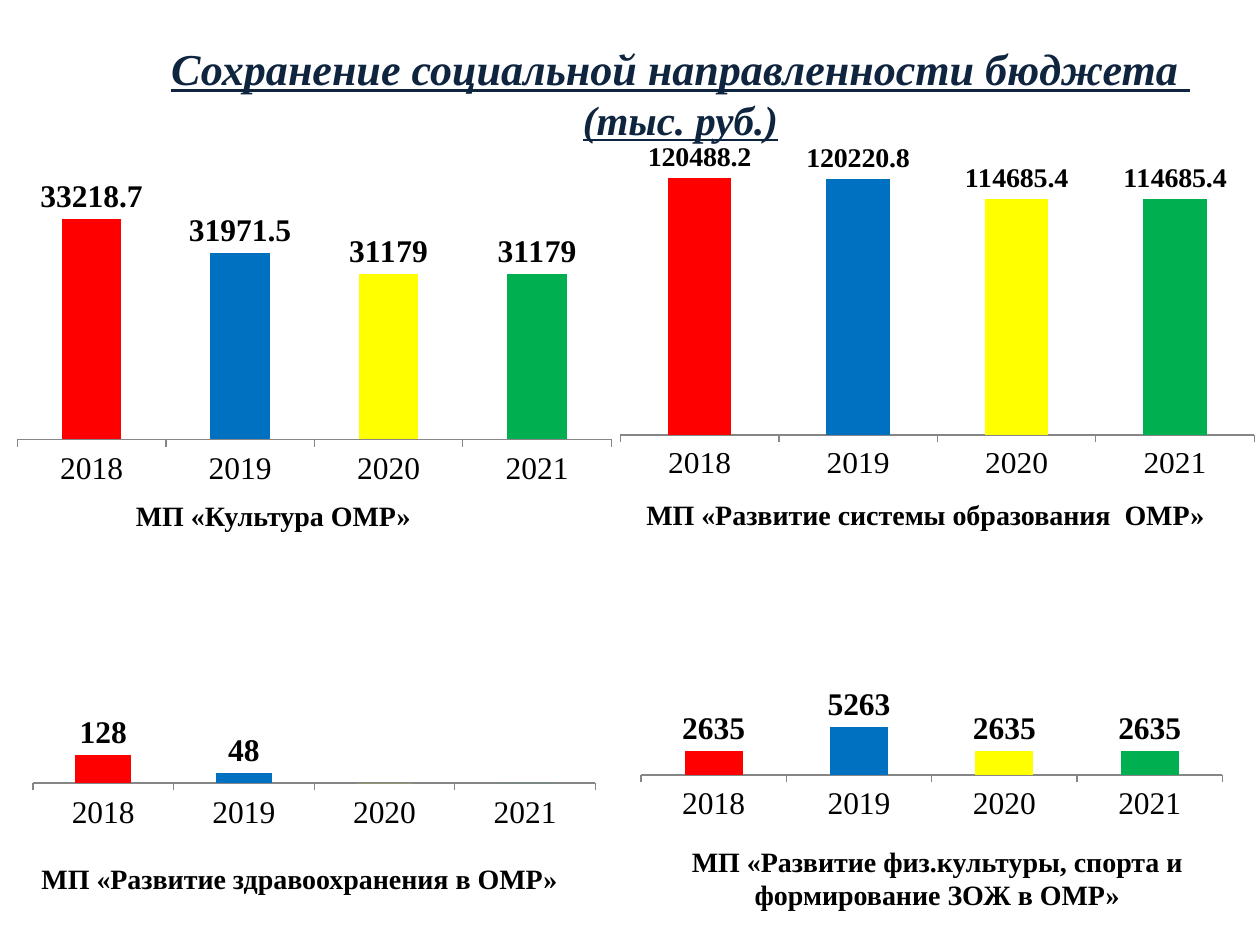
from lxml.etree import SubElement
from pptx import Presentation
from pptx.chart.data import CategoryChartData
from pptx.dml.color import RGBColor
from pptx.enum.chart import XL_CHART_TYPE, XL_LABEL_POSITION, XL_TICK_LABEL_POSITION, XL_TICK_MARK
from pptx.enum.text import MSO_ANCHOR, MSO_AUTO_SIZE, PP_ALIGN
from pptx.oxml.ns import qn
from pptx.util import Pt

FONT = "Times New Roman"
YEARS = ["2018", "2019", "2020", "2021"]
YEAR_COLORS = ["FF0000", "0070C0", "FFFF00", "00B050"]

TITLE_LINES = [
    ("Сохранение социальной направленности бюджета ", 25.2),
    ("(тыс. руб.)", 23.4),
]

# text, (left, top, width, height), alignment
CAPTIONS = [
    ("МП «Развитие физ.культуры, спорта и формирование ЗОЖ в ОМР»",
     (368.6, 478.8, 334, 46), PP_ALIGN.CENTER),
    ("МП «Культура ОМР»", (70.6, 281.5, 213, 26.6), PP_ALIGN.LEFT),
    ("МП «Развитие здравоохранения в ОМР»", (16.6, 488.9, 326, 26.6), PP_ALIGN.LEFT),
    ("МП «Развитие системы образования  ОМР»", (362.2, 280.8, 346.3, 26.6), PP_ALIGN.LEFT),
]

# values, (left, top, width, height), (axis minimum, maximum, step), label size, inner plot
CHARTS = [
    ([33218.7, 31971.5, 31179, 31179], (2.9, 94.3, 353.5, 187.2),
     (25000, 35000, 5000), 18, None),
    ([2635, 5263, 2635, 2635], (355.7, 302.4, 353.5, 173.5),
     (0, 25000, 5000), 18, (0.03, 0.06, 0.94, 0.75)),
    ([128, 48, 0, 0], (8.6, 308.2, 342, 172),
     (0, 1000, 200), 18, (0.03, 0.09, 0.94, 0.72)),
    ([120488.2, 120220.8, 114685.4, 114685.4], (347, 81.4, 377.3, 196.6),
     (50000, 125000, 10000), 16, None),
]


def rgb(hex_color):
    return RGBColor.from_string(hex_color)


def points(box):
    return [Pt(length) for length in box]


def style_font(font, size, color="000000", bold=False):
    font.name = FONT
    font.size = Pt(size)
    font.bold = bold
    font.color.rgb = rgb(color)


def fill_title(title):
    title.left, title.top, title.width, title.height = points((57.6, 0.7, 662.4, 72.7))
    frame = title.text_frame
    frame.auto_size = MSO_AUTO_SIZE.NONE
    frame.vertical_anchor = MSO_ANCHOR.TOP
    frame.margin_top = Pt(23)
    paragraph = frame.paragraphs[0]
    paragraph.alignment = PP_ALIGN.CENTER
    for index, (text, size) in enumerate(TITLE_LINES):
        if index:
            paragraph.add_line_break()
        run = paragraph.add_run()
        run.text = text
        style_font(run.font, size, "0F243E", bold=True)
        run.font.italic = True
        run.font.underline = True


def add_caption(slide, text, box, alignment):
    frame = slide.shapes.add_textbox(*points(box)).text_frame
    frame.word_wrap = True
    paragraph = frame.paragraphs[0]
    paragraph.alignment = alignment
    run = paragraph.add_run()
    run.text = text
    style_font(run.font, 16, bold=True)


def set_inner_plot(chart, plot):
    """Fix the plot area, given as fractions of the chart's size."""
    plot_area = chart.element.find(".//" + qn("c:plotArea"))
    layout = plot_area.find(qn("c:layout"))
    if layout is None:
        layout = SubElement(plot_area, qn("c:layout"))
        plot_area.insert(0, layout)
    manual = SubElement(layout, qn("c:manualLayout"))
    settings = [("layoutTarget", "inner"), ("xMode", "edge"), ("yMode", "edge")]
    for tag, value in settings + list(zip("xywh", plot)):
        SubElement(manual, qn("c:" + tag)).set("val", str(value))


def style_axes(chart, limits):
    category_axis = chart.category_axis
    style_font(category_axis.tick_labels.font, 18)
    category_axis.major_tick_mark = XL_TICK_MARK.OUTSIDE
    category_axis.tick_label_position = XL_TICK_LABEL_POSITION.LOW
    category_axis.format.line.color.rgb = rgb("868686")
    value_axis = chart.value_axis
    value_axis.minimum_scale, value_axis.maximum_scale, value_axis.major_unit = limits
    value_axis.has_major_gridlines = False
    value_axis.visible = False


def add_year_chart(slide, values, box, limits, label_size, plot):
    """Add a column chart with one series, and so one colour, per year."""
    data = CategoryChartData()
    data.categories = YEARS
    for year, value in enumerate(values):
        data.add_series(f"Series {year + 1}",
                        [value if column == year else None for column in range(len(YEARS))])
    chart = slide.shapes.add_chart(
        XL_CHART_TYPE.COLUMN_CLUSTERED, *points(box), data).chart
    chart.has_title = False
    chart.has_legend = False
    style_font(chart.font, 18)
    chart.font.name = "Calibri"
    style_axes(chart, limits)
    columns = chart.plots[0]
    columns.gap_width = 150
    columns.overlap = 100
    columns.vary_by_categories = False
    for series, value, color in zip(columns.series, values, YEAR_COLORS):
        series.format.fill.solid()
        series.format.fill.fore_color.rgb = rgb(color)
        if value:
            labels = series.data_labels
            labels.show_value = True
            labels.position = XL_LABEL_POSITION.OUTSIDE_END
            style_font(labels.font, label_size, bold=True)
    if plot:
        set_inner_plot(chart, plot)


def main():
    presentation = Presentation()
    presentation.slide_width, presentation.slide_height = Pt(720), Pt(540)
    slide = presentation.slides.add_slide(presentation.slide_layouts[5])
    fill_title(slide.shapes.title)
    for caption in CAPTIONS:
        add_caption(slide, *caption)
    for chart in CHARTS:
        add_year_chart(slide, *chart)
    presentation.save("out.pptx")


if __name__ == "__main__":
    main()
